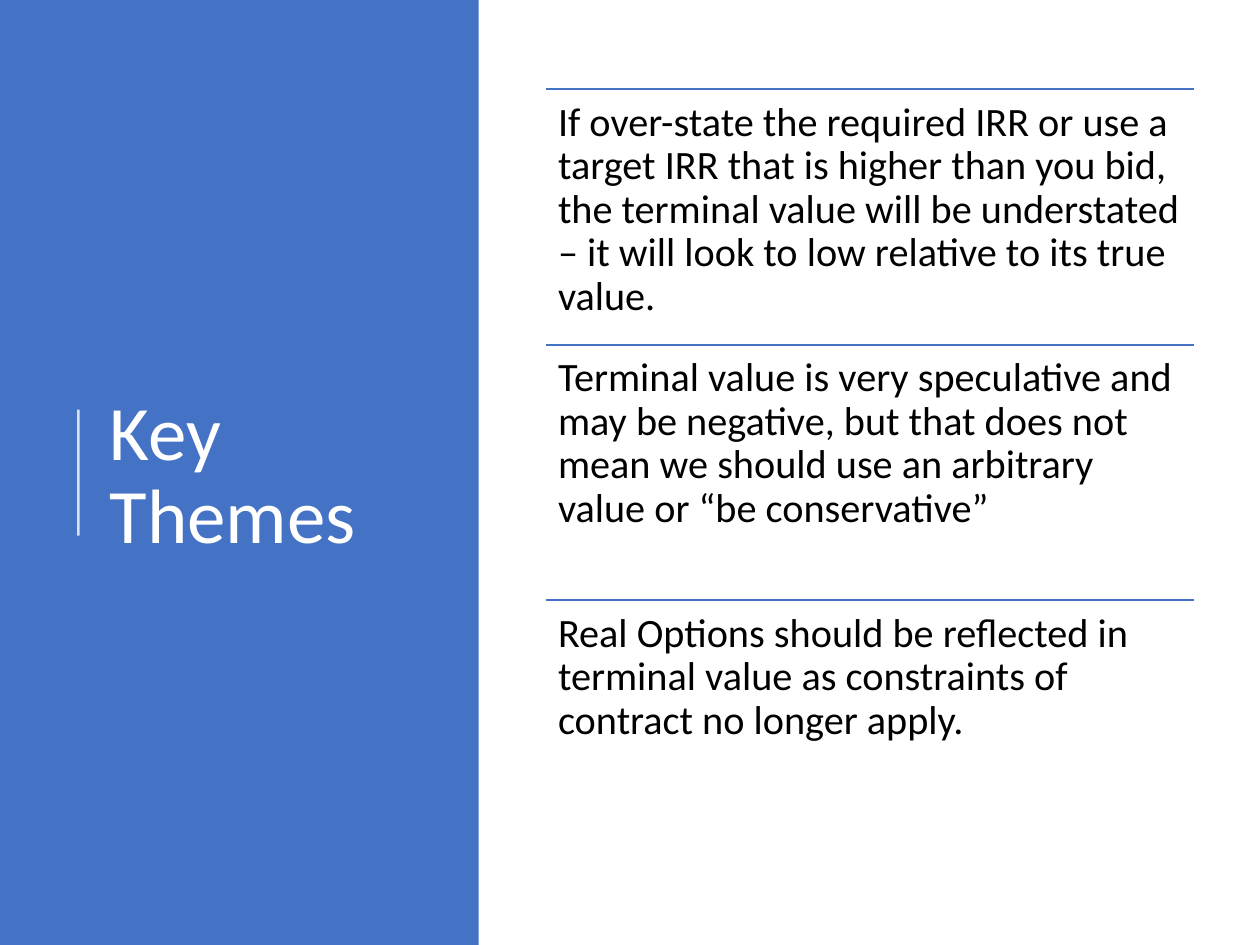
from dataclasses import dataclass

from lxml.etree import SubElement
from pptx import Presentation
from pptx.dml.color import RGBColor
from pptx.enum.shapes import MSO_CONNECTOR, MSO_SHAPE
from pptx.enum.text import MSO_ANCHOR
from pptx.oxml.ns import qn
from pptx.shapes.connector import Connector
from pptx.slide import Slide
from pptx.util import Cm, Pt

BLUE = RGBColor(0x44, 0x72, 0xC4)
WHITE = RGBColor(0xFF, 0xFF, 0xFF)
BLACK = RGBColor(0x00, 0x00, 0x00)
FONT = "Calibri"

THEMES = [
    "If over-state the required IRR or use a target IRR that is higher than you bid, "
    "the terminal value will be understated – it will look to low relative to its true value.",
    "Terminal value is very speculative and may be negative, but that does not mean "
    "we should use an arbitrary value or “be conservative”",
    "Real Options should be reflected in terminal value as constraints of contract "
    "no longer apply.",
]
THEME_LEFT, THEME_TOP = 11.0, 1.8
THEME_WIDTH, THEME_HEIGHT = 13.06, 5.15


@dataclass
class Box:
    """Position and size in centimetres."""
    left: float
    top: float
    width: float
    height: float


def add_line(s: Slide, box: Box, color: RGBColor, weight: float) -> Connector:
    line = s.shapes.add_connector(
        MSO_CONNECTOR.STRAIGHT, Cm(box.left), Cm(box.top),
        Cm(box.left + box.width), Cm(box.top + box.height))
    line.line.color.rgb = color
    line.line.width = Pt(weight)
    SubElement(line._element.spPr, qn("a:effectLst"))
    return line


def add_text(s: Slide, box: Box, text: str, size: float, color: RGBColor,
             anchor: MSO_ANCHOR = MSO_ANCHOR.TOP) -> None:
    tf = s.shapes.add_textbox(
        Cm(box.left), Cm(box.top), Cm(box.width), Cm(box.height)).text_frame
    tf.word_wrap = True
    tf.vertical_anchor = anchor
    tf.margin_left = tf.margin_right = Cm(0.25)
    tf.margin_top = tf.margin_bottom = Cm(0.25)
    p = tf.paragraphs[0]
    p.text = text
    p.line_spacing = 0.9
    p.font.name = FONT
    p.font.size = Pt(size)
    p.font.color.rgb = color


def add_title_panel(s: Slide) -> None:
    panel = s.shapes.add_shape(MSO_SHAPE.RECTANGLE, 0, 0, Cm(9.65), Cm(19.05))
    panel.shadow.inherit = False
    panel.fill.solid()
    panel.fill.fore_color.rgb = BLUE
    panel.line.fill.background()

    accent = add_line(s, Box(1.58, 8.26, 0, 2.54), WHITE, 1.5)
    rgb = accent.line._ln.find(f".//{qn('a:srgbClr')}")
    SubElement(rgb, qn("a:alpha")).set("val", "80000")

    add_text(s, Box(1.96, 1.98, 7.01, 15.29), "Key Themes", 44, WHITE, MSO_ANCHOR.MIDDLE)


def add_theme(s: Slide, index: int, text: str) -> None:
    top = THEME_TOP + index * THEME_HEIGHT
    add_line(s, Box(THEME_LEFT, top, THEME_WIDTH, 0), BLUE, 1)
    add_text(s, Box(THEME_LEFT, top, THEME_WIDTH, THEME_HEIGHT), text, 23, BLACK)


def main() -> None:
    prs = Presentation()
    prs.slide_width, prs.slide_height = Cm(25.4), Cm(19.05)
    s = prs.slides.add_slide(prs.slide_layouts[6])
    add_title_panel(s)
    for index, text in enumerate(THEMES):
        add_theme(s, index, text)
    prs.save("out.pptx")


if __name__ == "__main__":
    main()
